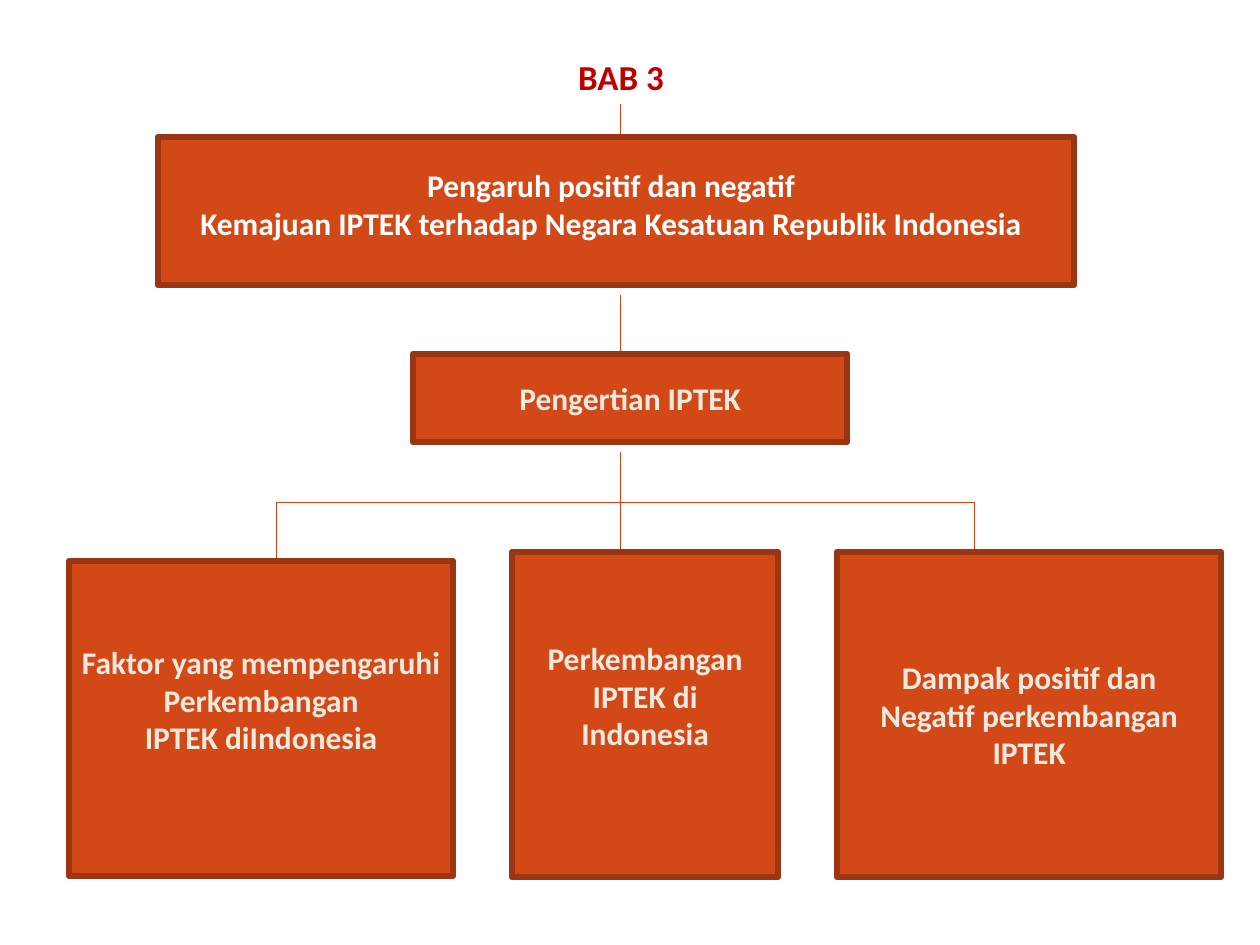
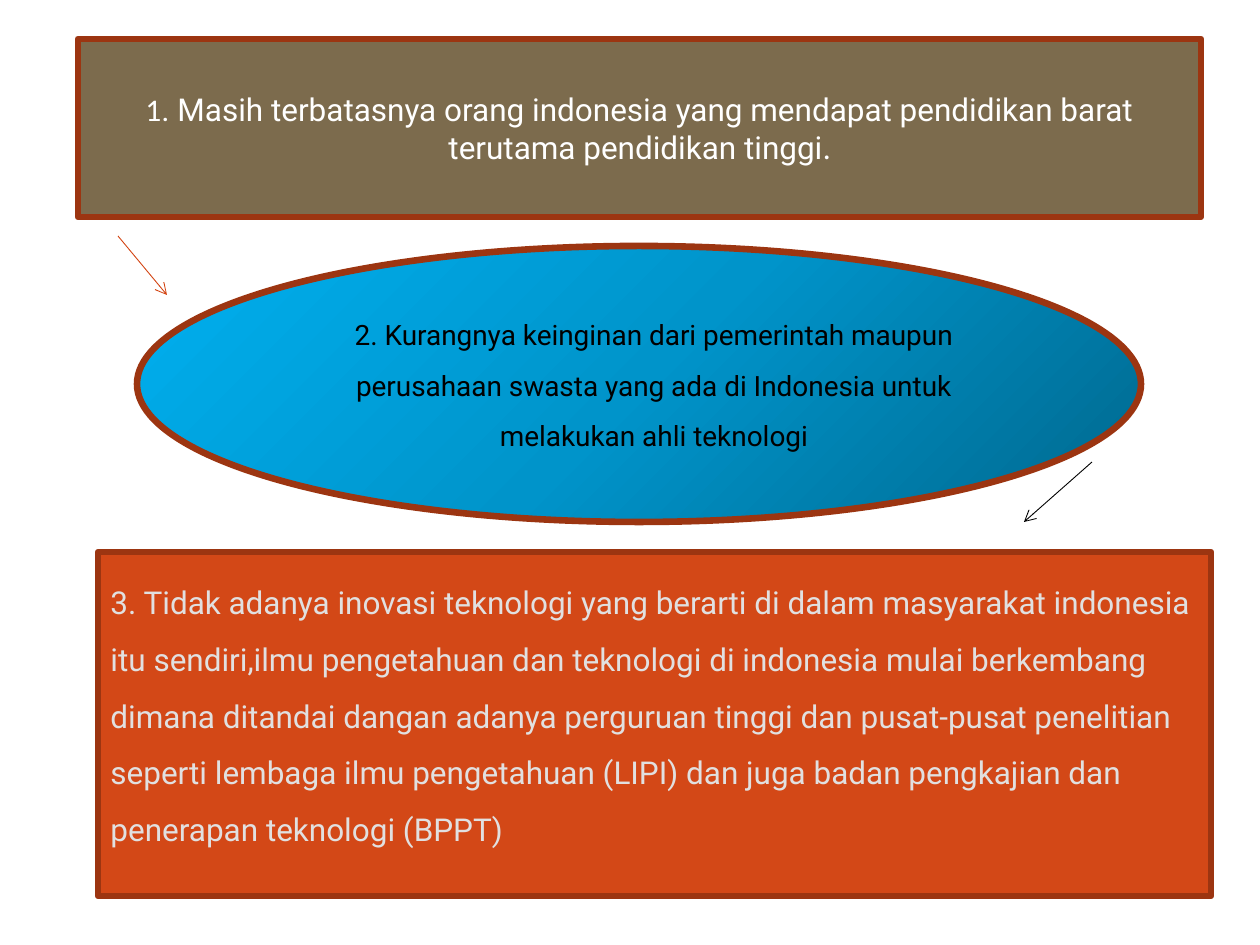
"""Builds the chapter 3 outline and the list of factors behind it."""
from copy import deepcopy
from dataclasses import dataclass

from lxml.etree import SubElement
from pptx import Presentation
from pptx.dml.color import RGBColor as RGB
from pptx.enum.shapes import MSO_CONNECTOR as CXN, MSO_SHAPE as SHAPE
from pptx.enum.text import MSO_ANCHOR as ANCHOR, MSO_AUTO_SIZE as AUTO, PP_ALIGN as ALIGN
from pptx.oxml.ns import qn
from pptx.util import Emu, Pt


@dataclass(frozen=True)
class Theme:
    orange: RGB = RGB.from_string("D34817")
    border: RGB = RGB.from_string("9C3511")
    rule: RGB = RGB.from_string("D34412")
    red: RGB = RGB.from_string("C00000")
    cream: RGB = RGB.from_string("EFEADF")
    grey: RGB = RGB.from_string("E1E0E0")
    olive: RGB = RGB.from_string("7C6B4D")
    white: RGB = RGB.from_string("FFFFFF")
    black: RGB = RGB.from_string("000000")
    blues: tuple = ("00688E", "0094CA", "00B0F0")
    head: str = "Calibri"
    body: str = "Roboto"
    title: Pt = Pt(20)
    text: Pt = Pt(18)
    small: Pt = Pt(16)
    frame: Pt = Pt(3.78)
    thin: Pt = Pt(0.5)


T = Theme()
PX = 914400 / 126


def px(*lengths):
    return [Emu(round(n * PX)) for n in lengths]


def write(sp, lines, color, size=T.text, font=T.head, bold=True, align=ALIGN.CENTER, spacing=None):
    tf = sp.text_frame
    tf.word_wrap = True
    tf.auto_size = AUTO.NONE
    tf.text = "\n".join(lines)
    for p in tf.paragraphs:
        p.alignment = align
        p.line_spacing = spacing
        p.font.name, p.font.size, p.font.bold = font, size, bold
        p.font.color.rgb = color
    return tf


prs = Presentation()
prs.slide_width, prs.slide_height = px(1260, 945)
outline = prs.slides.add_slide(prs.slide_layouts[5])
factors = prs.slides.add_slide(prs.slide_layouts[6])

title = outline.shapes.title
title.left, title.top, title.width, title.height = px(483, 49, 276, 55)
write(title, ["BAB 3"], T.red, T.title)

mid, left, right, branch = 620, 276, 974, 502
for s, x1, y1, x2, y2, color, arrow in (
    (outline, mid, 104, mid, 147, T.rule, False),
    (outline, mid, 295, mid, 354, T.rule, False),
    (outline, mid, 452, mid, 552, T.rule, False),
    (outline, left, branch, right, branch, T.rule, False),
    (outline, left, branch, left, 561, T.rule, False),
    (outline, right, branch, right, 552, T.rule, False),
    (factors, 118, 236, 167, 295, T.rule, True),
    (factors, 1092, 462, 1024, 522, T.black, True),
):
    ln = s.shapes.add_connector(CXN.STRAIGHT, *px(x1, y1, x2, y2))
    ln.line.color.rgb = color
    ln.line.width = T.thin
    if arrow:
        SubElement(ln.line._get_or_add_ln(), qn("a:tailEnd"), type="arrow")
    SubElement(ln._element.spPr, qn("a:effectLst"))

boxes = {}
for name, s, kind, x, y, w, h, fill, pad_right, pad_bottom in (
    ("topic", outline, SHAPE.RECTANGLE, 158, 137, 916, 148, T.orange, 22, 20),
    ("meaning", outline, SHAPE.RECTANGLE, 413, 354, 434, 88, T.orange, 12, 6),
    ("causes", outline, SHAPE.RECTANGLE, 69, 561, 384, 315, T.orange, 12, 44),
    ("growth", outline, SHAPE.RECTANGLE, 512, 552, 266, 325, T.orange, 12, 44),
    ("impact", outline, SHAPE.RECTANGLE, 837, 552, 384, 325, T.orange, 12, 6),
    ("schooling", factors, SHAPE.RECTANGLE, 78, 39, 1123, 178, T.olive, 12, 6),
    ("will", factors, SHAPE.OVAL, 137, 246, 1004, 276, None, 12, 6),
    ("innovation", factors, SHAPE.RECTANGLE, 98, 552, 1113, 344, T.orange, 12, 42),
):
    sp = boxes[name] = s.shapes.add_shape(kind, *px(x, y, w, h))
    sp.shadow.inherit = False
    if fill is not None:
        sp.fill.solid()
        sp.fill.fore_color.rgb = fill
    sp.line.color.rgb = T.border
    sp.line.width = T.frame
    tf = sp.text_frame
    tf.vertical_anchor = ANCHOR.MIDDLE
    tf.margin_right, tf.margin_bottom = px(pad_right, pad_bottom)

for name, color, lines in (
    ("topic", T.white, ["Pengaruh positif dan negatif",
                        "Kemajuan IPTEK terhadap Negara Kesatuan Republik Indonesia"]),
    ("meaning", T.cream, ["Pengertian IPTEK"]),
    ("causes", T.cream, ["Faktor yang mempengaruhi", "Perkembangan", "IPTEK diIndonesia"]),
    ("growth", T.cream, ["Perkembangan", "IPTEK di", "Indonesia"]),
    ("impact", T.cream, ["Dampak positif dan", "Negatif perkembangan", "IPTEK"]),
):
    write(boxes[name], lines, color)

tf = write(boxes["schooling"], ["1"], T.white, bold=False)
for text, font in (
    (". Masih terbatasnya orang indonesia yang mendapat pendidikan barat "
     "terutama pendidikan tinggi", T.body),
    (".", T.head),
):
    r = tf.paragraphs[0].add_run()
    r.text = text
    r.font.name = font

oval = boxes["will"]
oval.fill.gradient()
oval.fill.gradient_angle = 135
stops = oval._element.spPr.find(".//" + qn("a:gsLst"))
stops.insert(1, deepcopy(stops[0]))
for i, (stop, blue) in enumerate(zip(oval.fill.gradient_stops, T.blues)):
    stop.position = i / 2
    stop.color.rgb = RGB.from_string(blue)

caption = factors.shapes.add_textbox(*px(294, 295, 720, 217))
tf = write(caption, ["2. Kurangnya keinginan dari pemerintah maupun perusahaan swasta yang ada "
                     "di Indonesia untuk melakukan ahli teknologi"],
           T.black, T.small, T.body, False, spacing=1.5)
effects = SubElement(tf.paragraphs[0].runs[0]._r.get_or_add_rPr(), qn("a:effectLst"))
shadow = SubElement(effects, qn("a:outerShdw"), blurRad="38100", dist="38100", dir="2700000")
SubElement(shadow, qn("a:srgbClr"), val="000000")

write(boxes["innovation"],
      ["3. Tidak adanya inovasi teknologi yang berarti di dalam masyarakat indonesia itu "
       "sendiri,ilmu pengetahuan dan teknologi di indonesia mulai berkembang dimana ditandai "
       "dangan adanya perguruan tinggi dan pusat-pusat penelitian seperti lembaga ilmu "
       "pengetahuan (LIPI) dan juga badan pengkajian dan penerapan teknologi (BPPT)"],
      T.grey, font=T.body, bold=False, align=ALIGN.LEFT, spacing=1.5)

prs.save("out.pptx")
